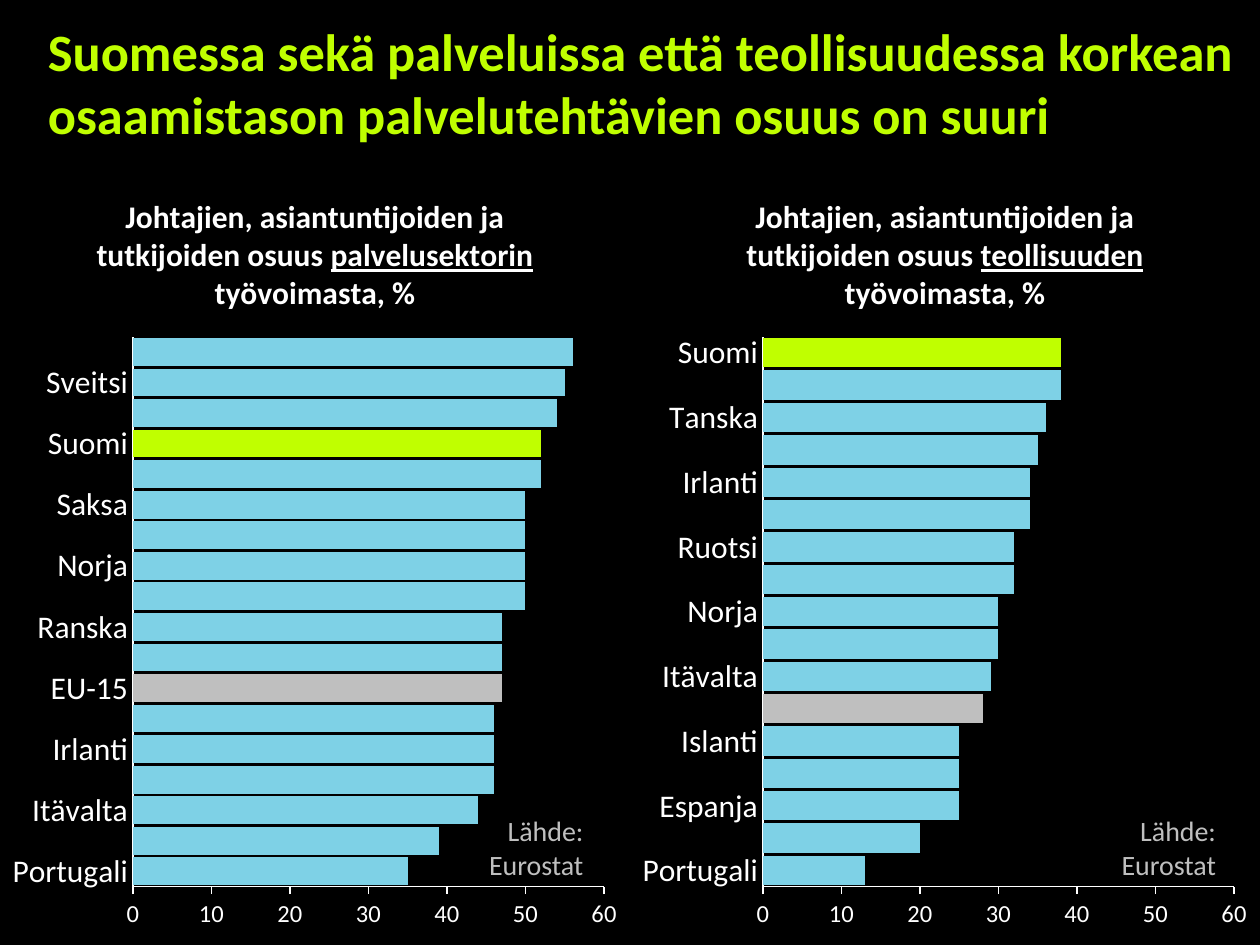
from lxml import etree
from pptx import Presentation
from pptx.chart.data import CategoryChartData
from pptx.dml.color import RGBColor
from pptx.enum.chart import XL_CHART_TYPE as ChartType, XL_TICK_MARK as TickMark
from pptx.enum.text import MSO_ANCHOR as Anchor, MSO_AUTO_SIZE as AutoSize, PP_ALIGN as Align
from pptx.oxml.ns import qn
from pptx.util import Inches, Pt

FONT = "Calibri"
WHITE, LIME, BLUE, GREY = "FFFFFF", "C0FF00", "7ED1E6", "BFBFBF"
PLOT_AREA = {"x": 0.211, "y": 0.215, "w": 0.748, "h": 0.71}

SERVICES = [
    ("Portugali", 35), ("Espanja", 39), ("Itävalta", 44), ("Kreikka", 46),
    ("Irlanti", 46), ("UK", 46), ("EU-15", 47), ("Italia", 47), ("Ranska", 47),
    ("Belgia", 50), ("Norja", 50), ("Tanska", 50), ("Saksa", 50), ("Ruotsi", 52),
    ("Suomi", 52), ("Alankomaat", 54), ("Sveitsi", 55), ("Islanti", 56),
]
INDUSTRY = [
    ("Portugali", 13), ("Kreikka", 20), ("Espanja", 25), ("Italia", 25),
    ("Islanti", 25), ("EU-27", 28), ("Itävalta", 29), ("Saksa", 30), ("Norja", 30),
    ("Alankomaat", 32), ("Ruotsi", 32), ("Belgia", 34), ("Irlanti", 34),
    ("Ranska", 35), ("Tanska", 36), ("Iso-Britannia", 38), ("Suomi", 38),
]


def rgb(value):
    return RGBColor.from_string(value)


def style_font(font, size, color, bold=False, underline=None):
    font.name = FONT
    font.size = Pt(size)
    font.color.rgb = rgb(color)
    font.bold = bold
    font.underline = underline


def write(para, text, size, color, align=None, **style):
    para.alignment = align
    span = para.add_run()
    span.text = text
    style_font(span.font, size, color, **style)


def add_title(slide, text):
    box = slide.shapes.title
    box.left, box.top = Inches(0.38), Inches(0.15)
    box.width, box.height = Inches(9.48), Inches(1.01)
    frame = box.text_frame
    frame.margin_left = frame.margin_right = frame.margin_top = frame.margin_bottom = 0
    frame.vertical_anchor = Anchor.TOP
    frame.auto_size = AutoSize.NONE
    frame.word_wrap = True
    write(frame.paragraphs[0], text, 30, LIME, align=Align.LEFT, bold=True)


def add_source(slide, left):
    box = slide.shapes.add_textbox(Inches(left), Inches(6.41), Inches(0.96), Inches(0.64))
    frame = box.text_frame
    frame.word_wrap = False
    write(frame.paragraphs[0], "Lähde:", 16, GREY, align=Align.RIGHT)
    write(frame.add_paragraph(), "Eurostat", 16, GREY, align=Align.RIGHT)


def style_axis(axis, size, tick, line_width):
    axis.has_major_gridlines = False
    axis.major_tick_mark = tick
    axis.minor_tick_mark = TickMark.NONE
    axis.format.line.color.rgb = rgb(WHITE)
    axis.format.line.width = Pt(line_width)
    style_font(axis.tick_labels.font, size, WHITE)


def fix_plot_area(chart):
    """Pin the inner plot area to fractions of the chart frame."""
    plot_area = chart.plots[0]._element.getparent()
    for old in plot_area.findall(qn("c:layout")):
        plot_area.remove(old)
    layout = etree.Element(qn("c:layout"))
    manual = etree.SubElement(layout, qn("c:manualLayout"))
    settings = {"layoutTarget": "inner", "xMode": "edge", "yMode": "edge", **PLOT_AREA}
    for name, value in settings.items():
        etree.SubElement(manual, qn(f"c:{name}")).set("val", str(value))
    plot_area.insert(0, layout)


def add_bar_chart(slide, left, sector, rows):
    data = CategoryChartData()
    data.categories = [country for country, _ in rows]
    data.add_series("Series 1", [share for _, share in rows])
    chart = slide.shapes.add_chart(ChartType.BAR_CLUSTERED, Inches(left), Inches(1.35),
                                   Inches(5), Inches(6.15), data).chart
    style_font(chart.font, 12, WHITE)
    chart.has_legend = False
    chart.has_title = True
    heading = chart.chart_title.text_frame.paragraphs[0]
    for text, underline in [("Johtajien, asiantuntijoiden ja tutkijoiden osuus ", False),
                            (sector, True), (" työvoimasta, %", False)]:
        write(heading, text, 18, WHITE, bold=True, underline=underline)
    chart.chart_title.include_in_layout = False

    style_axis(chart.category_axis, 18, TickMark.NONE, 1)
    style_axis(chart.value_axis, 14, TickMark.OUTSIDE, 0.75)
    chart.value_axis.minimum_scale = 0
    chart.value_axis.maximum_scale = 60
    chart.value_axis.major_unit = 10

    plot = chart.plots[0]
    plot.gap_width = plot.overlap = 10
    plot.vary_by_categories = False
    series = plot.series[0]
    series.format.fill.solid()
    series.format.fill.fore_color.rgb = rgb(BLUE)
    for index, (country, _) in enumerate(rows):
        if country == "Suomi" or country.startswith("EU-"):
            fill = series.points[index].format.fill
            fill.solid()
            fill.fore_color.rgb = rgb(LIME if country == "Suomi" else GREY)
    fix_plot_area(chart)


def main():
    deck = Presentation()
    deck.slide_width, deck.slide_height = Inches(10), Inches(7.5)
    page = deck.slides.add_slide(deck.slide_layouts[5])
    page.background.fill.solid()
    page.background.fill.fore_color.rgb = rgb("000000")
    add_title(page, "Suomessa sekä palveluissa että teollisuudessa korkean "
                    "osaamistason palvelutehtävien osuus on suuri")
    add_bar_chart(page, 0, "palvelusektorin", SERVICES)
    add_bar_chart(page, 5, "teollisuuden", INDUSTRY)
    for left in (3.77, 8.79):
        add_source(page, left)
    deck.save("out.pptx")


if __name__ == "__main__":
    main()
